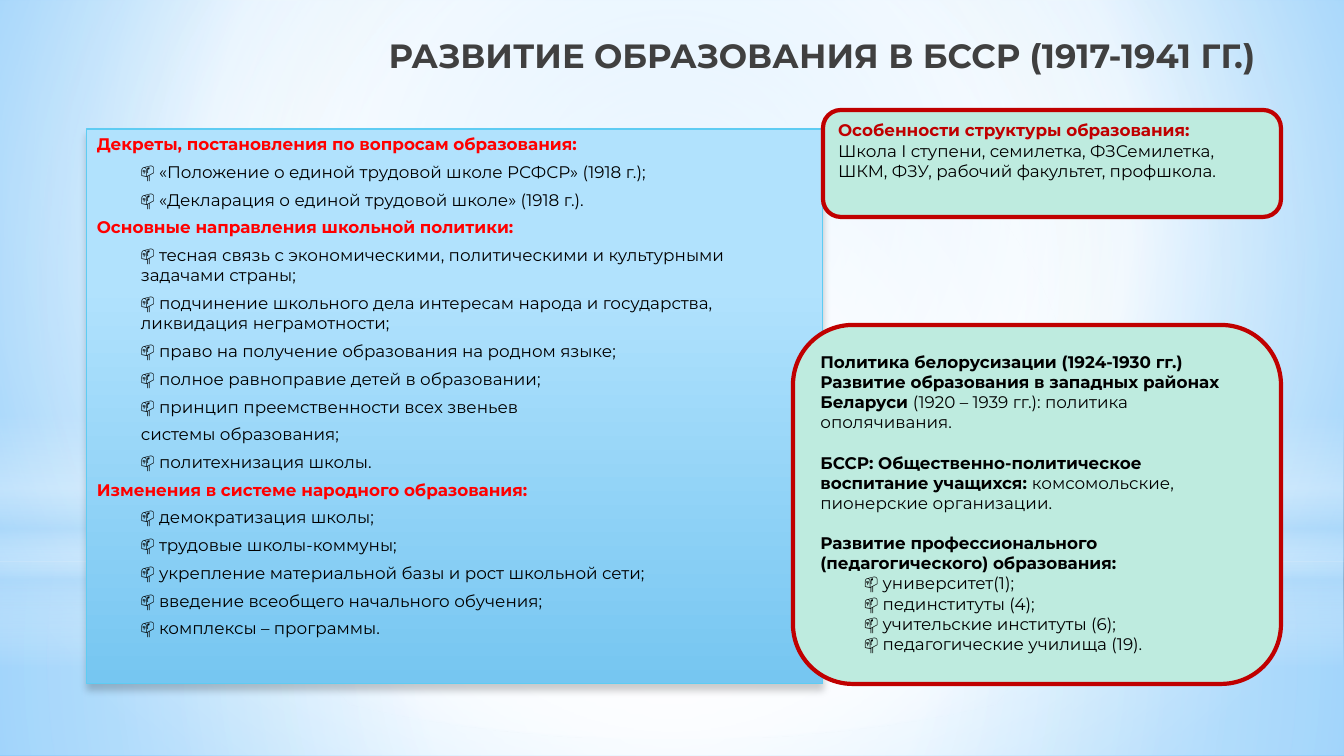
from lxml.etree import SubElement
from pptx import Presentation
from pptx.dml.color import RGBColor
from pptx.enum.shapes import MSO_SHAPE as SHAPE
from pptx.enum.text import MSO_ANCHOR as ANCHOR, PP_ALIGN as ALIGN
from pptx.oxml.ns import qn
from pptx.util import Emu, Pt

RED, DARK_RED, BLACK = "FF0000", "C00000", "000000"
CENTRE = (50, 50, 50, 50)


def px(n):
    return Emu(round(n * 914400 / 100.8))


def rgb(value):
    return RGBColor.from_string(value)


def add_colour(parent, value, opacity=100):
    clr = SubElement(parent, qn("a:srgbClr"), val=value)
    if opacity < 100:
        SubElement(clr, qn("a:alpha"), val=str(opacity * 1000))


def head(text, colour=BLACK, before=0):
    return {"runs": [(text, True)], "colour": colour, "before": before}


def plain(text, indent=0):
    return {"runs": [(text, False)], "indent": indent}


def item(text):
    return plain("📫 " + text, indent=44)


def mixed(bold_text, text, before=0):
    return {"runs": [(bold_text, True), (text, False)], "before": before}


class Deck:
    font = "Montserrat"
    box_fill = "BEEBDF"

    def __init__(self):
        self.prs = Presentation()
        self.prs.slide_width, self.prs.slide_height = px(1344), px(756)
        self.slide = self.prs.slides.add_slide(self.prs.slide_layouts[6])

    def gradient(self, fill, element, stops, circle=None):
        """Stops are (position, colour, opacity); without a circle it runs downwards."""
        fill.gradient()
        grad = element.find(".//" + qn("a:gradFill"))
        for child in list(grad):
            grad.remove(child)
        gs_lst = SubElement(grad, qn("a:gsLst"))
        for pos, *colour in stops:
            add_colour(SubElement(gs_lst, qn("a:gs"), pos=str(pos * 1000)), *colour)
        if circle:
            shade = SubElement(grad, qn("a:path"), path="circle")
            sides = {side: str(n * 1000) for side, n in zip("ltrb", circle)}
            SubElement(shade, qn("a:fillToRect"), **sides)
        else:
            SubElement(grad, qn("a:lin"), ang="5400000", scaled="0")

    def background(self, stops, circle):
        self.gradient(self.slide.background.fill, self.slide.element, stops, circle)

    def shape(self, kind, x, y, w, h):
        sp = self.slide.shapes.add_shape(kind, px(x), px(y), px(w), px(h))
        sp.shadow.inherit = False
        sp.line.fill.background()
        return sp

    def glow(self, kind, x, y, w, h, stops, circle=None):
        sp = self.shape(kind, x, y, w, h)
        self.gradient(sp.fill, sp.element, stops, circle)
        return sp

    def outline(self, sp, colour, width):
        sp.line.color.rgb = rgb(colour)
        sp.line.width = Pt(width)

    def shadow(self, sp):
        effects = sp.element.spPr.find(qn("a:effectLst"))
        shade = SubElement(effects, qn("a:outerShdw"), blurRad=str(Pt(5)),
                           dist=str(Pt(4)), dir="5400000", rotWithShape="0")
        add_colour(shade, BLACK, 20)

    def set_text(self, sp, paragraphs, before=0, after=0, size=12, align=ALIGN.LEFT):
        tf = sp.text_frame
        tf.word_wrap = True
        tf.vertical_anchor = ANCHOR.TOP
        for i, para in enumerate(paragraphs):
            p = tf.add_paragraph() if i else tf.paragraphs[0]
            p.alignment = align
            p.space_before = Pt(before + para.get("before", 0))
            p.space_after = Pt(after)
            if para.get("indent"):
                p.level = 1
                ppr = p._p.get_or_add_pPr()
                ppr.set("marL", str(px(para["indent"])))
                ppr.set("indent", "0")
            p.font.name, p.font.size = self.font, Pt(size)
            p.font.color.rgb = rgb(para.get("colour", BLACK))
            runs = para["runs"]
            if len(runs) == 1:
                p.font.bold = runs[0][1]
            for text, bold in runs:
                r = p.add_run()
                r.text = text
                if len(runs) > 1:
                    r.font.bold = bold

    def title(self, text, x, y, w, h):
        sp = self.slide.shapes.add_textbox(px(x), px(y), px(w), px(h))
        self.set_text(sp, [head(text, "404040")], size=24, align=ALIGN.RIGHT)

    def card(self, x, y, w, h, stops, paragraphs):
        sp = self.glow(SHAPE.RECTANGLE, x, y, w, h, stops)
        self.outline(sp, "5ECCF3", 0.75)
        self.shadow(sp)
        sp.text_frame.margin_right = px(30)
        self.set_text(sp, paragraphs, before=2.4, after=3)

    def box(self, x, y, w, h, paragraphs, top=5):
        sp = self.shape(SHAPE.ROUNDED_RECTANGLE, x, y, w, h)
        sp.fill.solid()
        sp.fill.fore_color.rgb = rgb(self.box_fill)
        self.outline(sp, DARK_RED, 3)
        sp.text_frame.margin_top = px(top)
        self.set_text(sp, paragraphs)


def main():
    deck = Deck()
    deck.background([(0, "9ED5FF"), (60, "FFFFFF"), (100, "5BB9FF")], (20, 10, 20, 60))
    deck.glow(SHAPE.RECTANGLE, 0, 562, 1344, 194,
              [(0, "FFFFFF", 91), (37, "FFFFFF", 76), (100, "B4DCFA", 79)], CENTRE)
    deck.glow(SHAPE.RECTANGLE, 0, 0, 1344, 562,
              [(0, "FFFFFF", 89), (48, "FFFFFF", 62), (100, "B4DCFA", 79)], CENTRE)
    deck.glow(SHAPE.RECTANGLE, 0, 415, 1344, 252,
              [(0, "FFFFFF", 0), (29, "FFFFFF", 30), (45, "B4DCFA", 40),
               (55, "FFFFFF", 26), (65, "B4DCFA", 60), (100, "FFFFFF", 0)])
    deck.glow(SHAPE.OVAL, 0, 176, 1344, 562,
              [(0, "FFFFFF"), (56, "FFFFFF", 0)], CENTRE)

    deck.title("РАЗВИТИЕ ОБРАЗОВАНИЯ В БССР (1917-1941 ГГ.)", 30, 30, 1235, 57)

    deck.card(87, 129, 736, 555, [(28, "B1E2FD"), (100, "76C6F1")], [
        head("Декреты, постановления по вопросам образования:", RED),
        item("«Положение о единой трудовой школе РСФСР» (1918 г.);"),
        item("«Декларация о единой трудовой школе» (1918 г.)."),
        head("Основные направления школьной политики:", RED),
        item("тесная связь с экономическими, политическими и культурными "
             "задачами страны;"),
        item("подчинение школьного дела интересам народа и государства, "
             "ликвидация неграмотности;"),
        item("право на получение образования на родном языке;"),
        item("полное равноправие детей в образовании;"),
        item("принцип преемственности всех звеньев"),
        plain("системы образования;", indent=44),
        item("политехнизация школы."),
        head("Изменения в системе народного образования:", RED),
        item("демократизация школы;"),
        item("трудовые школы-коммуны;"),
        item("укрепление материальной базы и рост школьной сети;"),
        item("введение всеобщего начального обучения;"),
        item("комплексы – программы."),
    ])

    line_gap = 14.4
    deck.box(793, 325, 488, 359, [
        head("Политика белорусизации (1924-1930 гг.)"),
        mixed("Развитие образования в западных районах Беларуси ",
              "(1920 – 1939 гг.): политика ополячивания."),
        mixed("БССР: Общественно-политическое воспитание учащихся: ",
              "комсомольские, пионерские организации.", line_gap),
        head("Развитие профессионального (педагогического) образования:",
             before=line_gap),
        item("университет(1);"),
        item("пединституты (4);"),
        item("учительские институты (6);"),
        item("педагогические училища (19)."),
    ], top=9)

    deck.box(823, 110, 458, 107, [
        head("Особенности структуры образования:", DARK_RED),
        plain("Школа I ступени, семилетка, ФЗСемилетка, ШКМ, ФЗУ, "
              "рабочий факультет, профшкола."),
    ])
    deck.prs.save("out.pptx")


if __name__ == "__main__":
    main()
